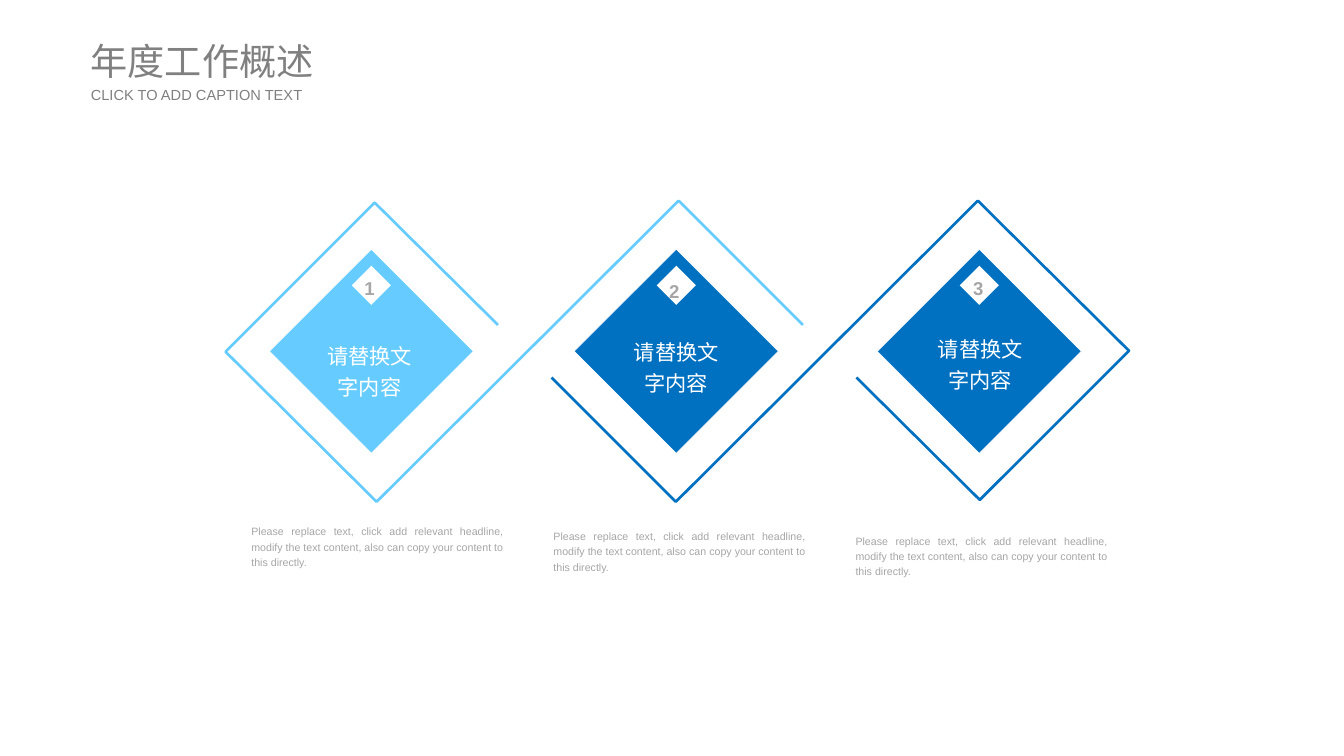
from pptx import Presentation
from pptx.dml.color import RGBColor
from pptx.enum.shapes import MSO_SHAPE
from pptx.enum.text import MSO_ANCHOR, MSO_AUTO_SIZE, PP_ALIGN
from pptx.util import Pt

PX = 9144
RECT = MSO_SHAPE.RECTANGLE
TOP, MIDDLE = MSO_ANCHOR.TOP, MSO_ANCHOR.MIDDLE
GROW = MSO_AUTO_SIZE.SHAPE_TO_FIT_TEXT
LEFT, CENTER, JUSTIFY = PP_ALIGN.LEFT, PP_ALIGN.CENTER, PP_ALIGN.JUSTIFY
SKY, BLUE, WHITE, SILVER, GRAY = "66CCFF", "0070C0", "FFFFFF", "A6A6A6", "808080"
CAPTION = ("Please replace text, click add relevant headline, modify the text "
           "content, also can copy your content to this directly.")
LABEL = "请替换文字内容"
TRAIL = [(840, 340), (710, 210), (394, 525), (236, 368), (392, 212), (521, 340)]
CARDS = [
    ("1", 313, SKY, (68, -6), MIDDLE, (24, 62), (-50, 255)),
    ("2", 632, BLUE, (68, -4), TOP, (26, 58), (-53, 260)),
    ("3", 949, BLUE, (69, -6), MIDDLE, (27, 55), (-54, 265)),
]


def color(code):
    """Turn a hex string into a colour."""
    return RGBColor.from_string(code)


def add_text(slide, box, text, size, code, align=LEFT, anchor=TOP,
             space=None, bold=None, wrap=True):
    """Add a text box without margins."""
    shape = slide.shapes.add_textbox(*(n * PX for n in box))
    frame = shape.text_frame
    frame.margin_left = frame.margin_right = 0
    frame.margin_top = frame.margin_bottom = 0
    frame.word_wrap = wrap
    frame.auto_size = GROW
    frame.vertical_anchor = anchor
    para = frame.paragraphs[0]
    para.text = text
    para.alignment = align
    para.line_spacing = space
    font = para.font
    font.name, font.size, font.bold = "Arial", Pt(size), bold
    font.color.rgb = color(code)


def add_diamond(slide, left, top, side, code, edge=None):
    """Add a square turned onto its corner."""
    shape = slide.shapes.add_shape(RECT, left * PX, top * PX, side * PX, side * PX)
    shape.rotation = 315
    shape.shadow.inherit = False
    shape.fill.solid()
    shape.fill.fore_color.rgb = color(code)
    if edge:
        shape.line.color.rgb = color(edge)
        shape.line.width = Pt(0.5)
    else:
        shape.line.fill.background()


def add_trail(slide, points, code):
    """Add an open zigzag line through the points."""
    build = slide.shapes.build_freeform(*points[0], scale=PX)
    build.add_line_segments(points[1:], close=False)
    shape = build.convert_to_shape()
    shape.shadow.inherit = False
    shape.fill.background()
    shape.line.color.rgb = color(code)
    shape.line.width = Pt(2)


def add_header(slide, left, top, width):
    """Add the title and the line below it."""
    add_text(slide, (left, top, width, 49), "年度工作概述", 28, GRAY, anchor=MIDDLE)
    add_text(slide, (left, top + 51, width, 19), "CLICK TO ADD CAPTION TEXT",
             11, GRAY, anchor=MIDDLE)


def add_card(slide, left, top, side, card):
    """Add a numbered diamond with its label and caption."""
    number, code, digit, anchor, label, note = card
    add_diamond(slide, left, top, side, code, WHITE)
    add_diamond(slide, left + 61, top - 8, 29, WHITE)
    add_text(slide, (left + digit[0], top + digit[1], 11, 26), number, 14, SILVER,
             CENTER, anchor, 1.2, True, False)
    add_text(slide, (left + label[0], top + label[1], 99, 62), LABEL, 16, WHITE,
             CENTER, space=1.2)
    add_text(slide, (left + note[0], top + note[1], 264, 47), CAPTION, 8, SILVER,
             JUSTIFY, space=1.2)


def main():
    """Build and save the slide."""
    deck = Presentation()
    deck.slide_width, deck.slide_height = 1406 * PX, 791 * PX
    slide = deck.slides.add_slide(deck.slide_layouts[6])
    add_trail(slide, TRAIL, SKY)
    add_trail(slide, [(1417 - x, 735 - y) for x, y in TRAIL], BLUE)
    for number, left, *rest in CARDS:
        add_card(slide, left, 292, 151, (number, *rest))
    add_header(slide, 95, 39, 253)
    deck.save("out.pptx")


if __name__ == "__main__":
    main()
